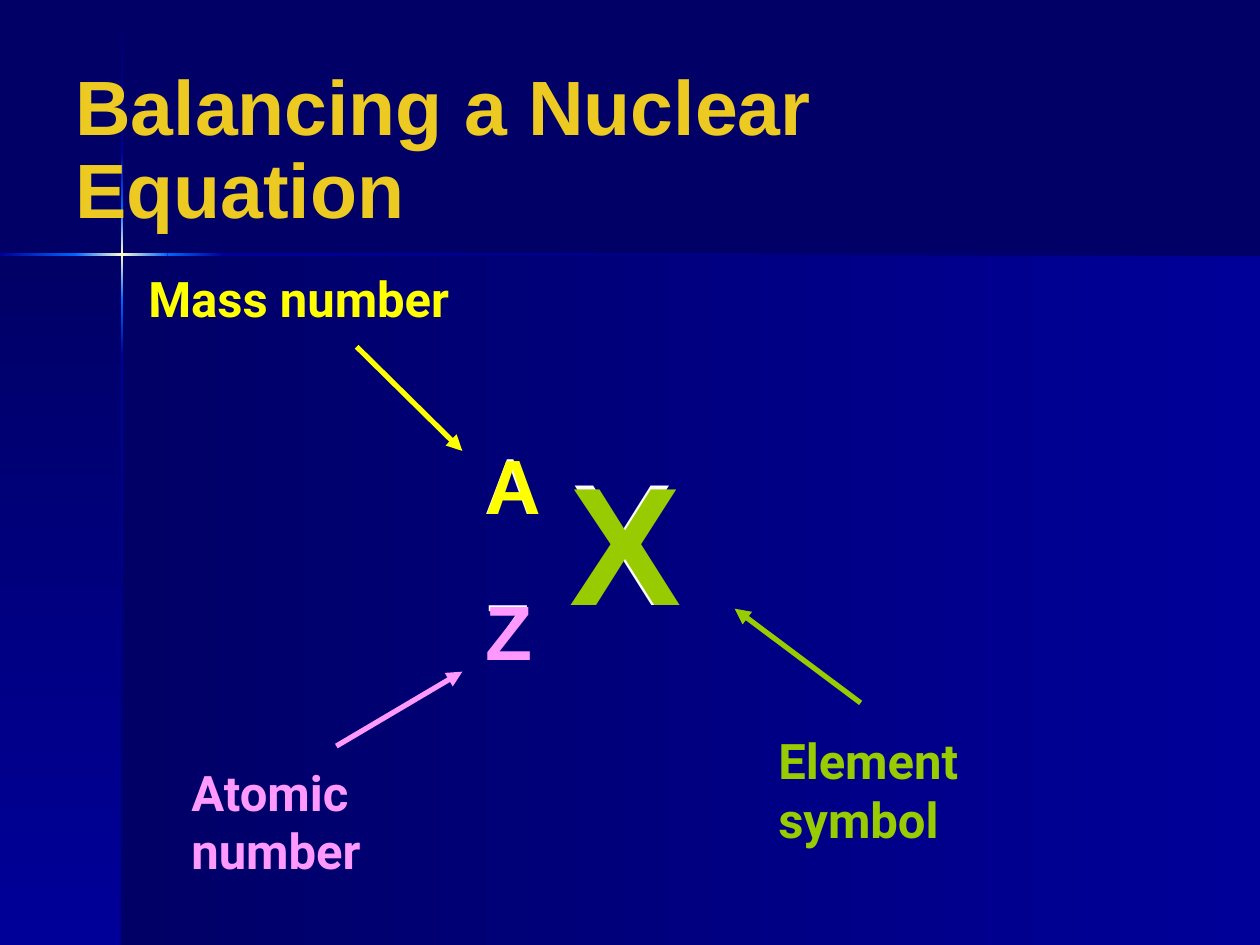
from copy import deepcopy
from dataclasses import dataclass

from pptx import Presentation
from pptx.dml.color import RGBColor as RGB
from pptx.enum.shapes import MSO_CONNECTOR as CONN, MSO_SHAPE as SHAPE
from pptx.oxml.ns import qn
from pptx.oxml.xmlchemy import OxmlElement as Element
from pptx.util import Cm, Pt


@dataclass(frozen=True)
class Theme:
    navy: str = "000066"
    blue: str = "000099"
    glow: str = "0066FF"
    spark: str = "FFFFCC"
    gold: str = "ECCA22"
    white: str = "FFFFFF"
    yellow: str = "FFFF00"
    pink: str = "FF99FF"
    green: str = "99CC00"
    heading: str = "Arial"
    body: str = "Roboto"
    symbol_size: int = 96
    large_size: int = 44
    label_size: int = 28
    arrow_width: int = 3


class Deck:
    def __init__(self, prs, theme):
        self.theme = theme
        self.slide = prs.slides.add_slide(prs.slide_layouts[6])
        fill = self.slide.background.fill
        fill.solid()
        fill.fore_color.rgb = RGB.from_string(theme.navy)

    def band(self, x, y, w, h, colors, down=False):
        sp = self.slide.shapes.add_shape(SHAPE.RECTANGLE, Cm(x), Cm(y), Cm(w), Cm(h))
        sp.shadow.inherit = False
        sp.line.fill.background()
        sp.fill.gradient()
        sp.fill.gradient_angle = 270 if down else 0
        stops = next(sp._element.spPr.iter(qn("a:gsLst")))
        for _ in colors[2:]:
            stops.append(deepcopy(stops[0]))
        for i, (stop, color) in enumerate(zip(sp.fill.gradient_stops, colors)):
            stop.position = i / (len(colors) - 1)
            stop.color.rgb = RGB.from_string(color)

    def text(self, text, x, y, w, h, size, color, font, bold=True, spacing=None):
        tf = self.slide.shapes.add_textbox(Cm(x), Cm(y), Cm(w), Cm(h)).text_frame
        tf.word_wrap = True
        p = tf.paragraphs[0]
        p.text = text
        p.line_spacing = spacing
        p.font.name = font
        p.font.size = Pt(size)
        p.font.bold = bold
        p.font.color.rgb = RGB.from_string(color)

    def arrow(self, x1, y1, x2, y2, color):
        line = self.slide.shapes.add_connector(
            CONN.STRAIGHT, Cm(x1), Cm(y1), Cm(x2), Cm(y2))
        line.line.color.rgb = RGB.from_string(color)
        line.line.width = Pt(self.theme.arrow_width)
        tail = Element("a:tailEnd")
        tail.set("type", "triangle")
        line.line._get_or_add_ln().append(tail)
        line._element.spPr.append(Element("a:effectLst"))


def draw_background(deck):
    t = deck.theme
    shade = (t.navy, t.blue)
    rise = (t.blue, t.glow)
    flare = (t.glow, t.spark, t.glow)
    deck.band(2.46, 5.13, 22.94, 13.92, shade)
    deck.band(0, 5.13, 2.46, 13.92, shade, down=True)
    for y, h, colors in (
        (0.03, 3.04, shade),
        (7.16, 11.89, shade[::-1]),
        (6.05, 1.11, rise[::-1]),
        (3.07, 1.12, rise),
        (4.19, 1.86, flare),
    ):
        deck.band(2.44, y, 0.05, h, colors, down=True)
    for x, w, colors in (
        (4.5, 20.9, shade[::-1]),
        (0, 1.55, rise),
        (3.38, 1.12, rise[::-1]),
        (1.52, 1.86, flare),
    ):
        deck.band(x, 5.11, w, 0.05, colors)


def draw_notation(deck):
    t = deck.theme
    symbols = (
        ("X", 11.23, 8.69, 3.81, 4.88, 4.32, t.symbol_size, t.green),
        ("A", 9.53, 8.69, 2.34, 3.38, 2.11, t.large_size, t.yellow),
        ("Z", 9.53, 11.63, 2.34, 2.74, 2.11, t.large_size, t.pink),
    )
    for text, x, y, back_w, _, h, size, _ in symbols:
        deck.text(text, x, y, back_w, h, size, t.white, t.body, bold=False)
    for text, x, y, w, h, color, ends in (
        ("Atomic number", 3.61, 15.24, 6.99, 2.62, t.pink, (6.78, 15.04, 9.32, 13.54)),
        ("Mass number", 2.74, 5.28, 7.62, 1.45, t.yellow, (7.19, 6.99, 9.32, 9.09)),
        ("Element symbol", 15.44, 14.61, 7.42, 2.62, t.green, (17.35, 14.17, 14.81, 12.27)),
    ):
        deck.text(text, x, y, w, h, t.label_size, color, t.body)
        deck.arrow(*ends, color)
    deck.text("Balancing a Nuclear Equation", 1.27, 1.27, 22.35, 1.93,
              t.large_size, t.gold, t.heading, spacing=0.9)
    for text, x, y, _, front_w, h, size, color in symbols:
        deck.text(text, x, y, front_w, h, size, color, t.heading)


def main():
    prs = Presentation()
    prs.slide_width, prs.slide_height = Cm(25.4), Cm(19.05)
    deck = Deck(prs, Theme())
    draw_background(deck)
    draw_notation(deck)
    prs.save("out.pptx")


if __name__ == "__main__":
    main()
